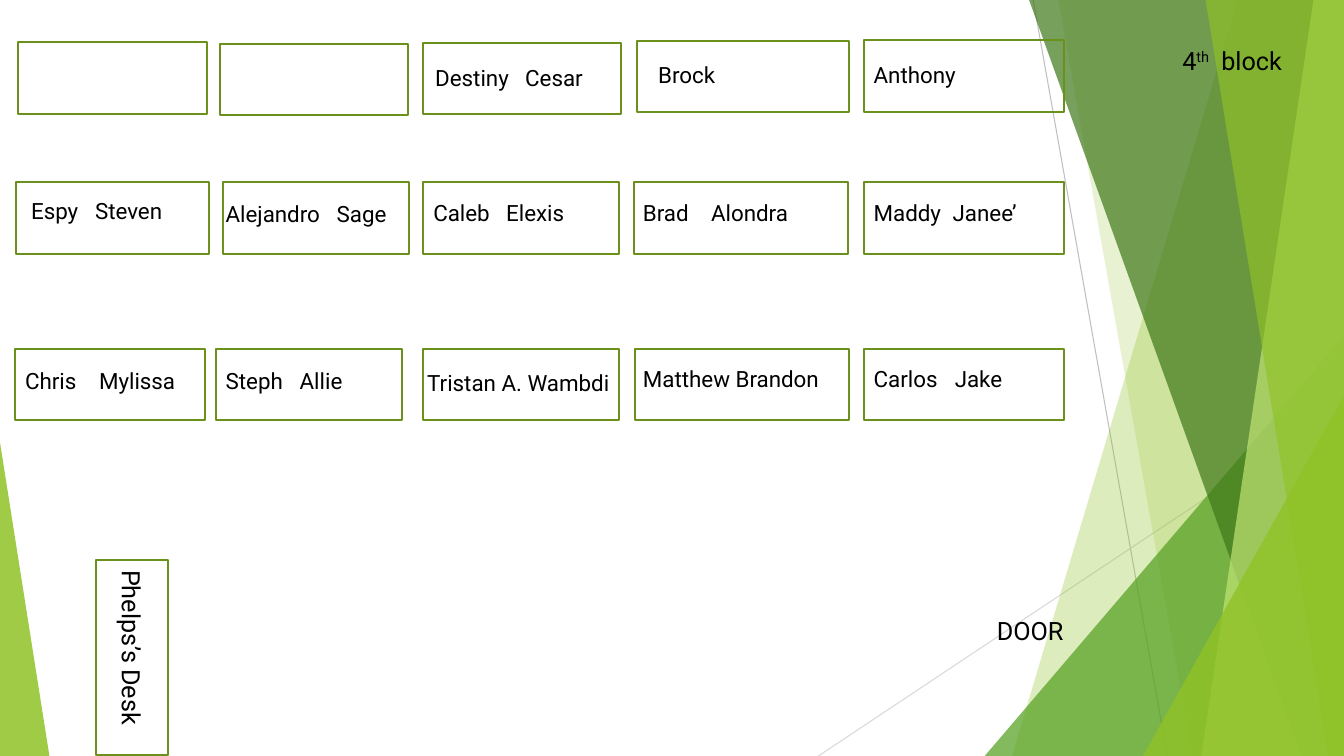
from lxml.etree import SubElement
from pptx import Presentation
from pptx.dml.color import RGBColor
from pptx.enum.shapes import MSO_CONNECTOR, MSO_SHAPE
from pptx.enum.text import MSO_AUTO_SIZE
from pptx.oxml.ns import qn
from pptx.util import Pt

WIDTH, HEIGHT = 960, 540
DESK_HEIGHT = 51.1


def paint(fill, color):
    fill.solid()
    fill.fore_color.rgb = RGBColor.from_string(color)


def add_text(page, text, left, top, width, height=26.6, size=16,
             rotation=0, tab=None, raised=None):
    """Add a label; tab is the stop in points, raised the superscript part."""
    box = page.shapes.add_textbox(Pt(left), Pt(top), Pt(width), Pt(height))
    box.rotation = rotation
    frame = box.text_frame
    frame.word_wrap = True
    frame.auto_size = MSO_AUTO_SIZE.SHAPE_TO_FIT_TEXT
    para = frame.paragraphs[0]
    if tab:
        stops = SubElement(para._p.get_or_add_pPr(), qn("a:tabLst"))
        SubElement(stops, qn("a:tab"), pos=str(Pt(tab)), algn="l")
    before, mark, after = text.partition(raised) if raised else (text, "", "")
    for part in filter(None, (before, mark, after)):
        span = para.add_run()
        span.text = part
        span.font.size = Pt(size)
        span.font.name = "Roboto"
        paint(span.font.fill, "000000")
        if part == mark:
            span.font._element.set("baseline", "30000")


deck = Presentation()
deck.slide_width, deck.slide_height = Pt(WIDTH), Pt(HEIGHT)
page = deck.slides.add_slide(deck.slide_layouts[6])
paint(page.background.fill, "FFFFFF")

# Thin background lines
for start_x, start_y, end_x, color in [
    (738, 0, 833.8, "BFBFBF"),
    (WIDTH, 290.2, 584.6, "D9D9D9"),
]:
    line = page.shapes.add_connector(
        MSO_CONNECTOR.STRAIGHT, Pt(start_x), Pt(start_y), Pt(end_x), Pt(HEIGHT))
    paint(line.line.fill, color)
    line.line.width = Pt(0.75)
    SubElement(line._element.spPr, qn("a:effectLst"))

# Translucent facets: a band runs from its slanted left edge (top x, bottom x)
# to the right of the slide; a triangle has left, top, width and peak position
for kind, place, color, opacity in [
    ("band", (884.2, 722.9), "90C226", 30),
    ("band", (756, 851.8), "90C226", 20),
    ("triangle", (703.4, 239.8, 256.6, 1), "54A021", 72),
    ("band", (735.1, 929.5), "3F7819", 70),
    ("band", (938.2, 858.2), "C0E474", 70),
    ("band", (861.1, 949), "90C226", 65),
    ("triangle", (816.5, 283, 143.5, 1), "90C226", 80),
    ("triangle", (0, 316.1, 35.3, 0), "90C226", 85),
]:
    if kind == "band":
        top_x, bottom_x = place
        outline = page.shapes.build_freeform(Pt(top_x), 0)
        outline.add_line_segments([
            (Pt(WIDTH), 0), (Pt(WIDTH), Pt(HEIGHT)), (Pt(bottom_x), Pt(HEIGHT))])
        facet = outline.convert_to_shape()
    else:
        left, top, width, peak = place
        facet = page.shapes.add_shape(
            MSO_SHAPE.ISOSCELES_TRIANGLE, Pt(left), Pt(top), Pt(width), Pt(HEIGHT - top))
        facet.adjustments[0] = peak
    paint(facet.fill, color)
    shade = facet._element.spPr.find(qn("a:solidFill"))[0]
    SubElement(shade, qn("a:alpha"), val=str(opacity * 1000))
    facet.line.fill.background()
    facet.shadow.inherit = False

# Desks: left, top, width, rotation
desks = [
    (13, 30.2, 134.6, 0), (157, 31.3, 134.6, 0), (302.4, 30.5, 141.1, 0),
    (455, 29.2, 151.2, 0), (617, 28.6, 143.3, 0),
    (24.5, 444.2, 139.7, 90),
]
for top, row in [
    (130.3, [(11.5, 137.5), (159, 133.2), (302.4, 139.7), (452.9, 152.6), (617, 143.3)]),
    (249, [(10.8, 135.4), (154.1, 133.2), (302.4, 139.7), (453.6, 152.6), (617, 143.3)]),
]:
    desks += [(left, top, width, 0) for left, width in row]

for left, top, width, rotation in desks:
    desk = page.shapes.add_shape(
        MSO_SHAPE.RECTANGLE, Pt(left), Pt(top), Pt(width), Pt(DESK_HEIGHT))
    desk.rotation = rotation
    desk.fill.background()
    paint(desk.line.fill, "6B901C")
    desk.line.width = Pt(1.5)
    desk.shadow.inherit = False

# Students: names, left, top, width, tab stop of the second name
for names, left, top, width, tab in [
    ("Destiny\tCesar", 303.8, 42.5, 143.3, 64.3),
    ("Brock", 463, 40.3, 143.3, None),
    ("Anthony", 617, 40.3, 143.3, None),
    ("Espy\tSteven", 15.1, 137.5, 123.8, 45.7),
    ("Alejandro\tSage", 154.1, 139.7, 156.2, 79.3),
    ("Caleb\tElexis", 302.4, 139, 123.8, 52.1),
    ("Brad\tAlondra", 452.2, 139, 139.7, 48.6),
    ("Maddy\tJanee’", 617, 139, 143.3, 56.4),
    ("Chris\tMylissa", 10.8, 258.5, 131.8, 52.9),
    ("Steph\tAllie", 154.1, 258.5, 126, 52.9),
    ("Tristan A. Wambdi", 298.1, 259.9, 149.8, None),
    ("Matthew Brandon", 452.2, 257, 154.1, None),
    ("Carlos\tJake", 617, 257, 143.3, 57.9),
]:
    add_text(page, names, left, top, width, tab=tab)

add_text(page, "DOOR", 704.9, 435.6, 144.7, height=29.1, size=18)
add_text(page, "Phelps’s Desk", 21.6, 457.9, 144.7, height=29.1, size=18, rotation=90)
add_text(page, "4th\tblock", 837.4, 28.8, 101.5, height=29.1, size=18, tab=27.9, raised="th")

deck.save("out.pptx")
